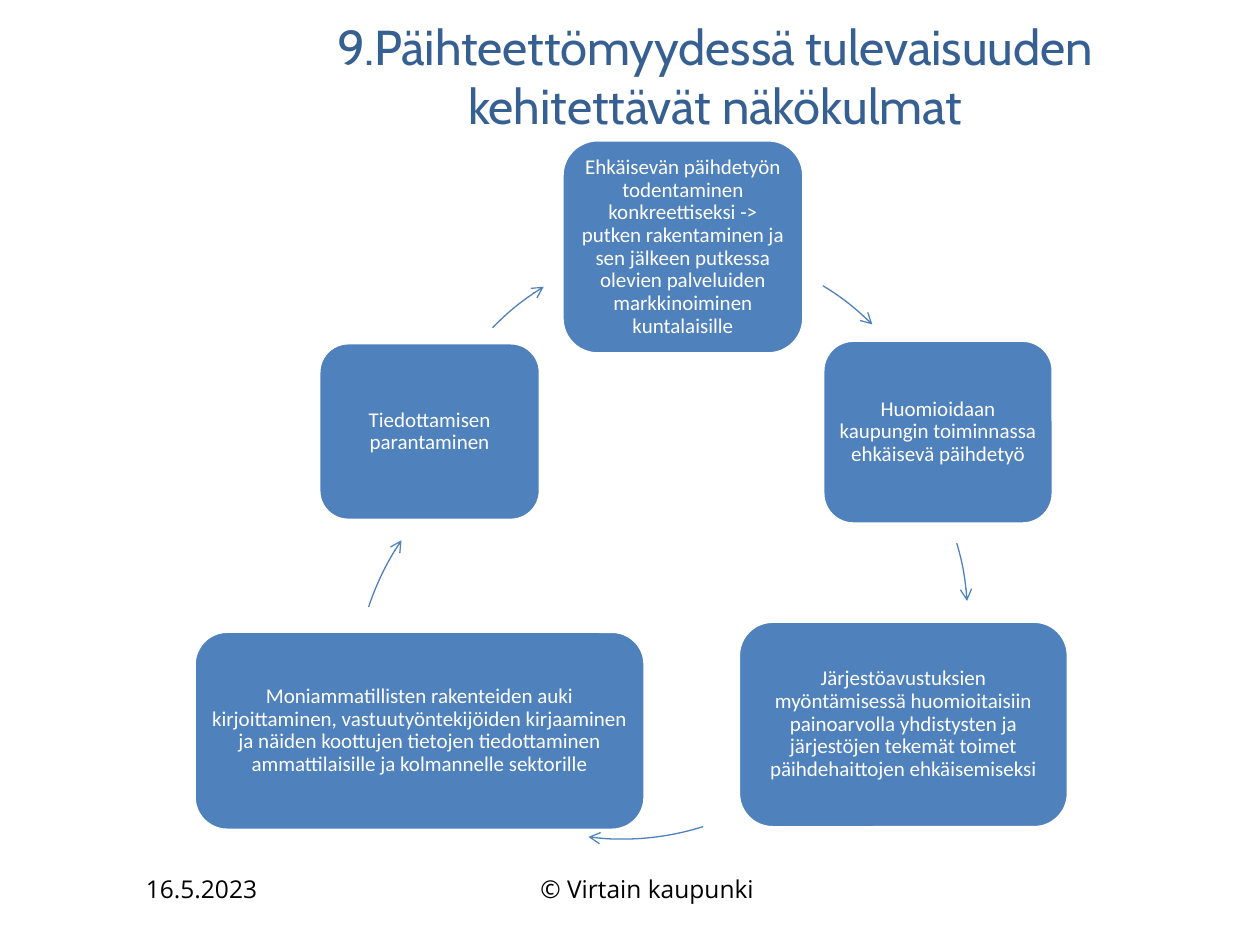
from lxml import etree
from pptx import Presentation
from pptx.dml.color import RGBColor
from pptx.enum.shapes import MSO_SHAPE
from pptx.enum.text import MSO_ANCHOR, PP_ALIGN
from pptx.oxml.ns import qn
from pptx.util import Inches, Pt

COLORS = {"title": "376092", "box": "4F81BD", "white": "FFFFFF", "black": "000000"}

prs = Presentation()
prs.slide_width, prs.slide_height = Inches(10), Inches(7.5)
s = prs.slides.add_slide(prs.slide_layouts[6])

# Grid of 1000 columns by 750 rows
COL, ROW = prs.slide_width // 1000, prs.slide_height // 750


def place(x, y, w, h):
    return x * COL, y * ROW, w * COL, h * ROW


def write(sp, text, font, size, color, frame=None, para=None):
    tf = sp.text_frame
    p = tf.paragraphs[0]
    r = p.add_run()
    r.text = text
    r.font.color.rgb = RGBColor.from_string(COLORS[color])
    for obj, values in (
        (tf, {"word_wrap": True, **(frame or {})}),
        (p, para or {}),
        (r.font, {"name": font, "size": Pt(size)}),
    ):
        for name, value in values.items():
            setattr(obj, name, value)


# Title
write(s.shapes.add_textbox(*place(217, 8, 701, 56)),
      "9.Päihteettömyydessä tulevaisuuden kehitettävät näkökulmat",
      "Cabin", 28, "title", para={"alignment": PP_ALIGN.CENTER})

# Footer: date and copyright
for x, w, text in ((106, 233, "16.5.2023"), (419, 220, "© Virtain kaupunki")):
    write(s.shapes.add_textbox(*place(x, 689, w, 40)), text, "Open Sans", 14, "black")

# Cycle boxes, clockwise from the top
BOX_FRAME = {"vertical_anchor": MSO_ANCHOR.MIDDLE}
BOX_FRAME.update({f"margin_{side}": 5 * COL for side in ("left", "right", "top", "bottom")})
BOX_PARA = {"alignment": PP_ALIGN.CENTER, "line_spacing": 0.9}
boxes = [
    (446, 111, 192, 170, "Ehkäisevän päihdetyön todentaminen konkreettiseksi -> putken "
     "rakentaminen ja sen jälkeen putkessa olevien palveluiden markkinoiminen kuntalaisille"),
    (653, 270, 183, 146, "Huomioidaan kaupungin toiminnassa ehkäisevä päihdetyö"),
    (586, 493, 262, 164, "Järjestöavustuksien myöntämisessä huomioitaisiin painoarvolla "
     "yhdistysten ja järjestöjen tekemät toimet päihdehaittojen ehkäisemiseksi"),
    (154, 501, 358, 158, "Moniammatillisten rakenteiden auki kirjoittaminen, "
     "vastuutyöntekijöiden kirjaaminen ja näiden koottujen tietojen tiedottaminen "
     "ammattilaisille ja kolmannelle sektorille"),
    (253, 272, 176, 141, "Tiedottamisen parantaminen"),
]
for *cell, text in boxes:
    sp = s.shapes.add_shape(MSO_SHAPE.ROUNDED_RECTANGLE, *place(*cell))
    sp.shadow.inherit = False
    sp.fill.solid()
    sp.fill.fore_color.rgb = RGBColor.from_string(COLORS["box"])
    sp.line.color.rgb = RGBColor.from_string(COLORS["white"])
    sp.line.width = Pt(2)
    write(sp, text, "Calibri", 12, "white", BOX_FRAME, BOX_PARA)

# Arc arrows: circle left and top, then start and end angle in degrees
DIAMETER = 424
arcs = [
    (331, 196, 301.3, 314.8),
    (344, 279, 343.6, 356.2),
    (282, 242, 72.4, 97.3),
    (282, 336, 198.2, 214.2),
    (331, 196, 224.2, 238.3),
]
for x, y, *angles in arcs:
    sp = s.shapes.add_shape(MSO_SHAPE.ARC, *place(x, y, DIAMETER, DIAMETER))
    sp.shadow.inherit = False
    sp.fill.background()
    sp.line.color.rgb = RGBColor.from_string(COLORS["box"])
    sp.line.width = Pt(0.75)
    for i, angle in enumerate(angles):
        sp.adjustments[i] = angle * 0.6  # 60000 units a degree, scaled by 100000
    etree.SubElement(sp.line._get_or_add_ln(), qn("a:tailEnd"), type="arrow")

prs.save("out.pptx")
